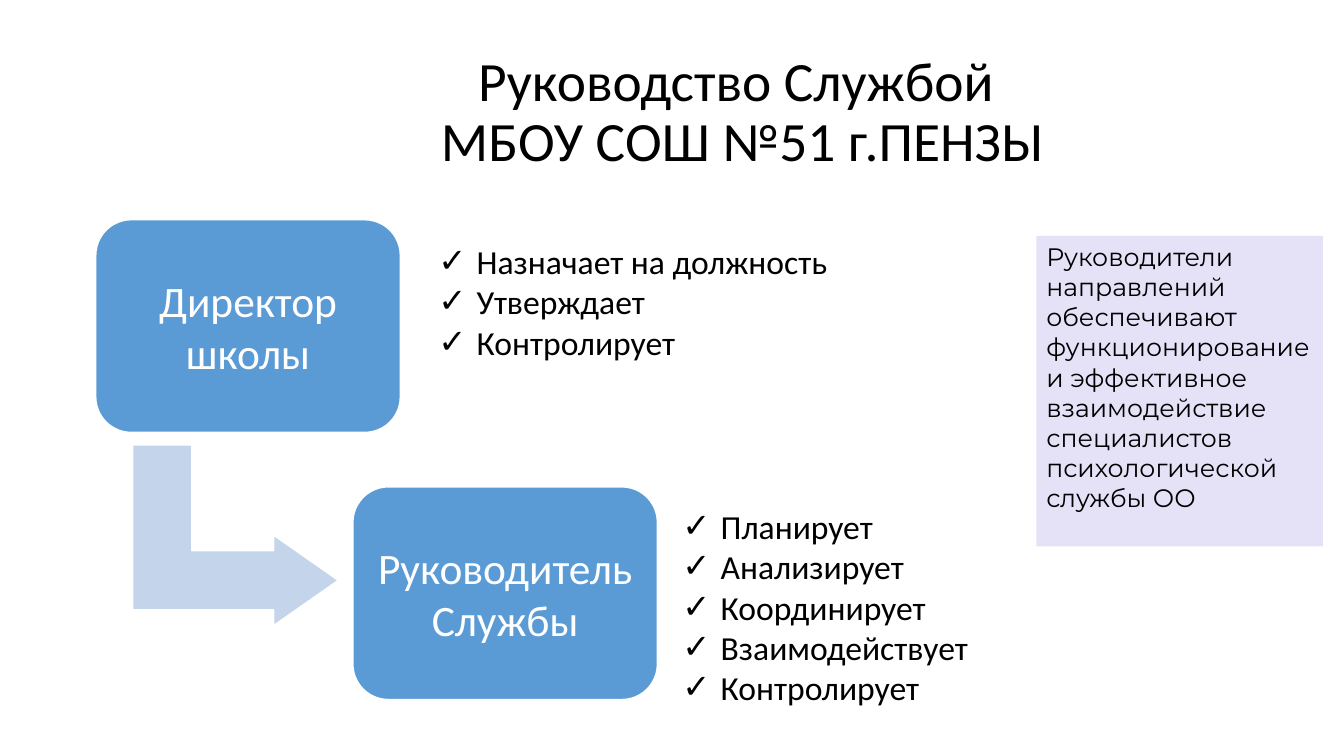
from pptx import Presentation
from pptx.dml.color import RGBColor as Rgb
from pptx.enum.shapes import MSO_SHAPE as Kind
from pptx.enum.text import MSO_ANCHOR as Anchor, PP_ALIGN as Align
from pptx.oxml.ns import qn
from pptx.util import Inches, Pt
from lxml.etree import SubElement

HEX = {"ink": "000000", "white": "FFFFFF", "blue": "5B9BD5",
       "pale": "C4D5EB", "lilac": "E5E2F7"}


def color(name):
    return Rgb.from_string(HEX[name])


def style(para, size, ink="ink", face="Calibri", align=Align.LEFT):
    para.alignment = align
    para.font.size = Pt(size)
    for run in para.runs:
        run.font.size = Pt(size)
        run.font.name = face
        run.font.color.rgb = color(ink)


def add_text(slide, box):
    frame = slide.shapes.add_textbox(*map(Inches, box)).text_frame
    frame.word_wrap = True
    return frame


def add_block(slide, kind, box, fill, line=None):
    shape = slide.shapes.add_shape(kind, *map(Inches, box))
    shape.shadow.inherit = False
    shape.fill.solid()
    shape.fill.fore_color.rgb = color(fill)
    if line:
        shape.line.color.rgb = color(line)
        shape.line.width = Pt(1)
    else:
        shape.line.fill.background()
    return shape


def add_title(slide, box, text):
    frame = add_text(slide, box)
    frame.vertical_anchor = Anchor.MIDDLE
    frame.text = text
    para = frame.paragraphs[0]
    para.line_spacing = 0.9
    style(para, 39.6, align=Align.CENTER)


def add_role(slide, box, text):
    shape = add_block(slide, Kind.ROUNDED_RECTANGLE, box, "blue", "white")
    shape.adjustments[0] = 0.167
    frame = shape.text_frame
    frame.word_wrap = True
    frame.vertical_anchor = Anchor.MIDDLE
    frame.margin_left = frame.margin_right = Inches(0.03)
    frame.text = text
    style(frame.paragraphs[0], 31, "white", align=Align.CENTER)


def add_arrow(slide, box):
    shape = add_block(slide, Kind.BENT_UP_ARROW, box, "pale", "white")
    shape.rotation = 90
    for i, part in enumerate((0.328, 0.25, 0.358)):
        shape.adjustments[i] = part


def add_duties(slide, box, duties):
    frame = add_text(slide, box)
    frame.text = "\n".join(duties)
    for para in frame.paragraphs:
        props = para._p.get_or_add_pPr()
        props.set("marL", str(Inches(0.38)))
        props.set("indent", str(-Inches(0.38)))
        SubElement(props, qn("a:buFont")).set("typeface", "Calibri")
        SubElement(props, qn("a:buChar")).set("char", "✓")
        style(para, 24)


def add_note(slide, box, text):
    frame = add_block(slide, Kind.RECTANGLE, box, "lilac").text_frame
    frame.word_wrap = True
    frame.vertical_anchor = Anchor.TOP
    frame.text = text
    style(frame.paragraphs[0], 18, face="Montserrat")


def main():
    deck = Presentation()
    deck.slide_width, deck.slide_height = Inches(13.33), Inches(7.5)
    slide = deck.slides.add_slide(deck.slide_layouts[6])

    # Heading
    add_title(slide, (2.19, 0.4, 10.22, 1.45),
              "Руководство Службой\v МБОУ СОШ №51 г.ПЕНЗЫ")

    # Chain of command
    add_arrow(slide, (1.44, 4.29, 1.79, 2.04))
    add_role(slide, (0.95, 2.18, 3.02, 2.11), "Директор школы")
    add_role(slide, (3.5, 4.83, 3.02, 2.11), "Руководитель Службы")

    # Duties of each role
    add_duties(slide, (4.25, 2.34, 4.13, 1.72),
               ["Назначает на должность", "Утверждает", "Контролирует"])
    add_duties(slide, (6.67, 4.97, 4.13, 2.52),
               ["Планирует", "Анализирует", "Координирует",
                "Взаимодействует", "Контролирует"])

    # Side note
    add_note(slide, (10.28, 2.34, 2.84, 3.08),
             "Руководители направлений обеспечивают функционирование "
             "и эффективное взаимодействие специалистов "
             "психологической службы ОО")

    deck.save("out.pptx")


if __name__ == "__main__":
    main()
